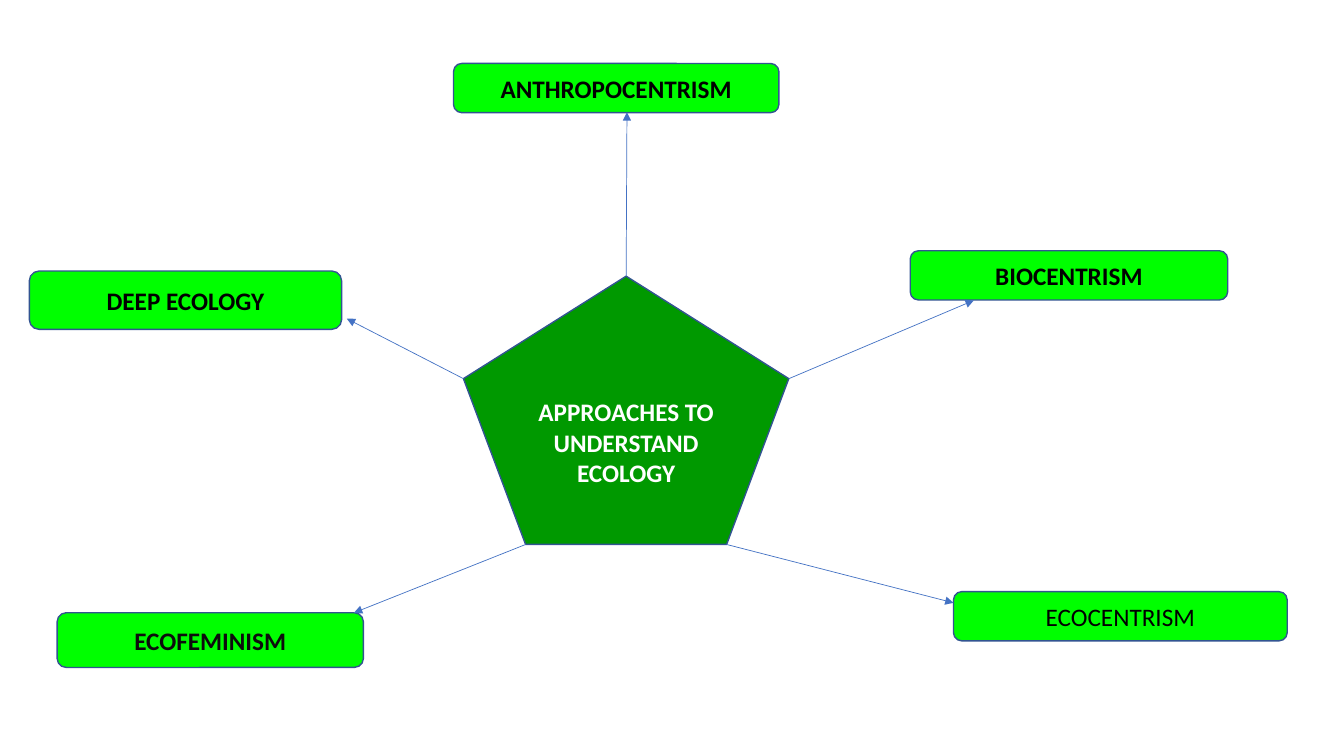
from dataclasses import dataclass

from lxml import etree
from pptx import Presentation
from pptx.dml.color import RGBColor
from pptx.enum.shapes import MSO_CONNECTOR as CONNECTOR, MSO_SHAPE as SHAPE
from pptx.enum.text import MSO_ANCHOR as ANCHOR, PP_ALIGN as ALIGN
from pptx.oxml.ns import qn
from pptx.util import Cm, Pt


@dataclass(frozen=True)
class Theme:
    font: str = "Calibri"
    text_size: Pt = Pt(18)
    outline_width: Pt = Pt(1)
    arrow_width: Pt = Pt(0.5)
    black: RGBColor = RGBColor(0x00, 0x00, 0x00)
    soft_black: RGBColor = RGBColor(0x0D, 0x0D, 0x0D)
    white: RGBColor = RGBColor(0xFF, 0xFF, 0xFF)
    lime: RGBColor = RGBColor(0x00, 0xFF, 0x00)
    green: RGBColor = RGBColor(0x00, 0x99, 0x00)
    outline: RGBColor = RGBColor(0x32, 0x54, 0x91)
    arrow: RGBColor = RGBColor(0x44, 0x72, 0xC4)


THEME = Theme()

# Left, top, width, height in cm
PENTAGON = (11.68, 6.96, 8.2, 6.76)

# Label, box, arrow tip, text colour, bold; clockwise from the top
APPROACHES = [
    ("ANTHROPOCENTRISM", (11.43, 1.6, 8.2, 1.24), (15.8, 2.83), THEME.black, True),
    ("BIOCENTRISM", (22.94, 6.32, 8, 1.24), (24.54, 7.57), THEME.black, True),
    ("ECOCENTRISM", (24.03, 14.91, 8.41, 1.24), (24.03, 15.19), THEME.black, False),
    ("ECOFEMINISM", (1.44, 15.44, 7.72, 1.38), (8.92, 15.44), THEME.soft_black, True),
    ("DEEP ECOLOGY", (0.74, 6.83, 7.87, 1.47), (8.74, 8.03), THEME.black, True),
]


def pentagon_corners(left, top, width, height):
    """Corners in cm, clockwise from the top."""
    right, bottom = left + width, top + height
    shoulder, inset = top + 0.382 * height, 0.191 * width
    return [
        (left + width / 2, top),
        (right, shoulder),
        (right - inset, bottom),
        (left + inset, bottom),
        (left, shoulder),
    ]


def add_label_shape(slide, kind, box, text, fill, color, bold=True):
    sp = slide.shapes.add_shape(kind, *map(Cm, box))
    sp.shadow.inherit = False
    sp.fill.solid()
    sp.fill.fore_color.rgb = fill
    sp.line.color.rgb = THEME.outline
    sp.line.width = THEME.outline_width
    tf = sp.text_frame
    tf.word_wrap = True
    tf.vertical_anchor = ANCHOR.MIDDLE
    p = tf.paragraphs[0]
    p.alignment = ALIGN.CENTER
    r = p.add_run()
    r.text = text
    r.font.name = THEME.font
    r.font.size = THEME.text_size
    r.font.bold = bold
    r.font.color.rgb = color
    return sp


def add_arrow(slide, start, end):
    points = map(Cm, (*start, *end))
    arrow = slide.shapes.add_connector(CONNECTOR.STRAIGHT, *points)
    arrow.line.color.rgb = THEME.arrow
    arrow.line.width = THEME.arrow_width
    etree.SubElement(arrow.line._get_or_add_ln(), qn("a:tailEnd"), type="triangle")
    etree.SubElement(arrow._element.spPr, qn("a:effectLst"))


def main():
    prs = Presentation()
    prs.slide_width, prs.slide_height = Cm(33.87), Cm(19.05)
    slide = prs.slides.add_slide(prs.slide_layouts.get_by_name("Blank"))

    for label, box, _, color, bold in APPROACHES:
        add_label_shape(slide, SHAPE.ROUNDED_RECTANGLE, box, label, THEME.lime, color, bold)
    add_label_shape(slide, SHAPE.REGULAR_PENTAGON, PENTAGON,
                    "APPROACHES TO UNDERSTAND ECOLOGY", THEME.green, THEME.white)
    for corner, (_, _, tip, _, _) in zip(pentagon_corners(*PENTAGON), APPROACHES):
        add_arrow(slide, corner, tip)

    prs.save("out.pptx")


if __name__ == "__main__":
    main()
